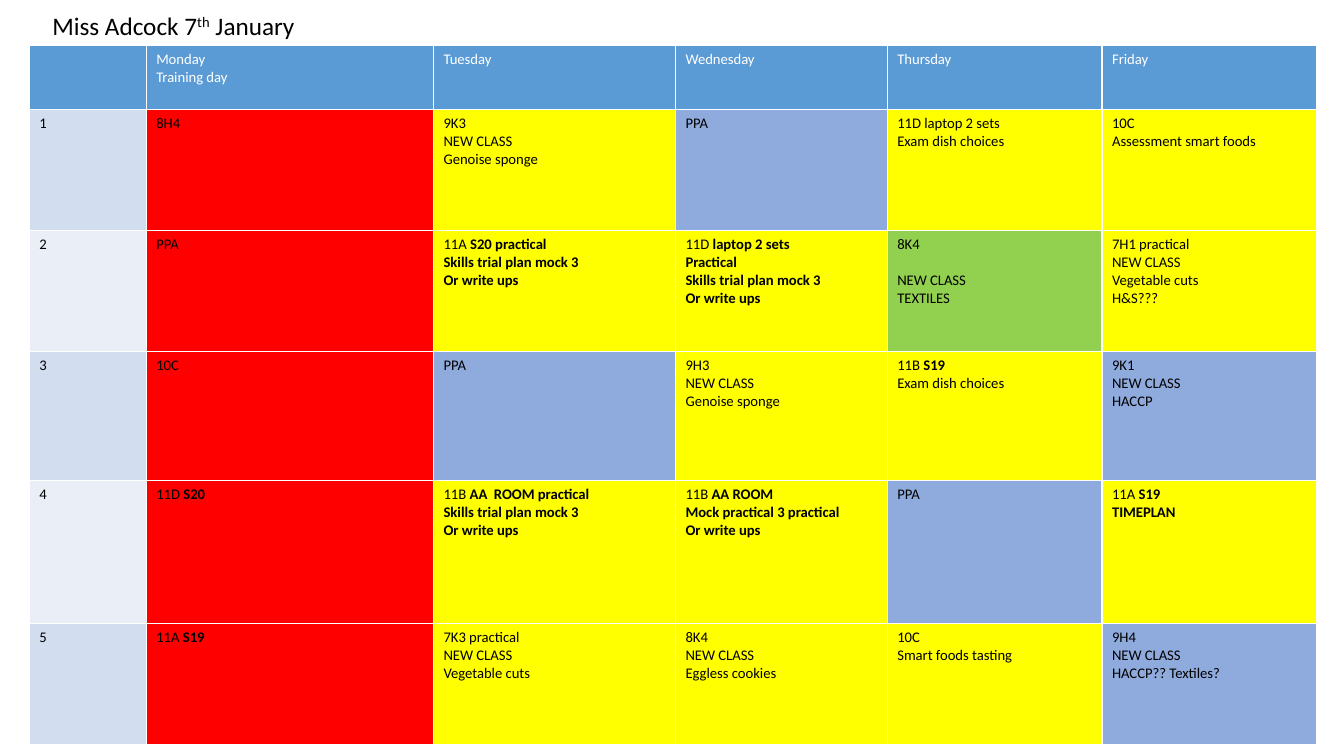
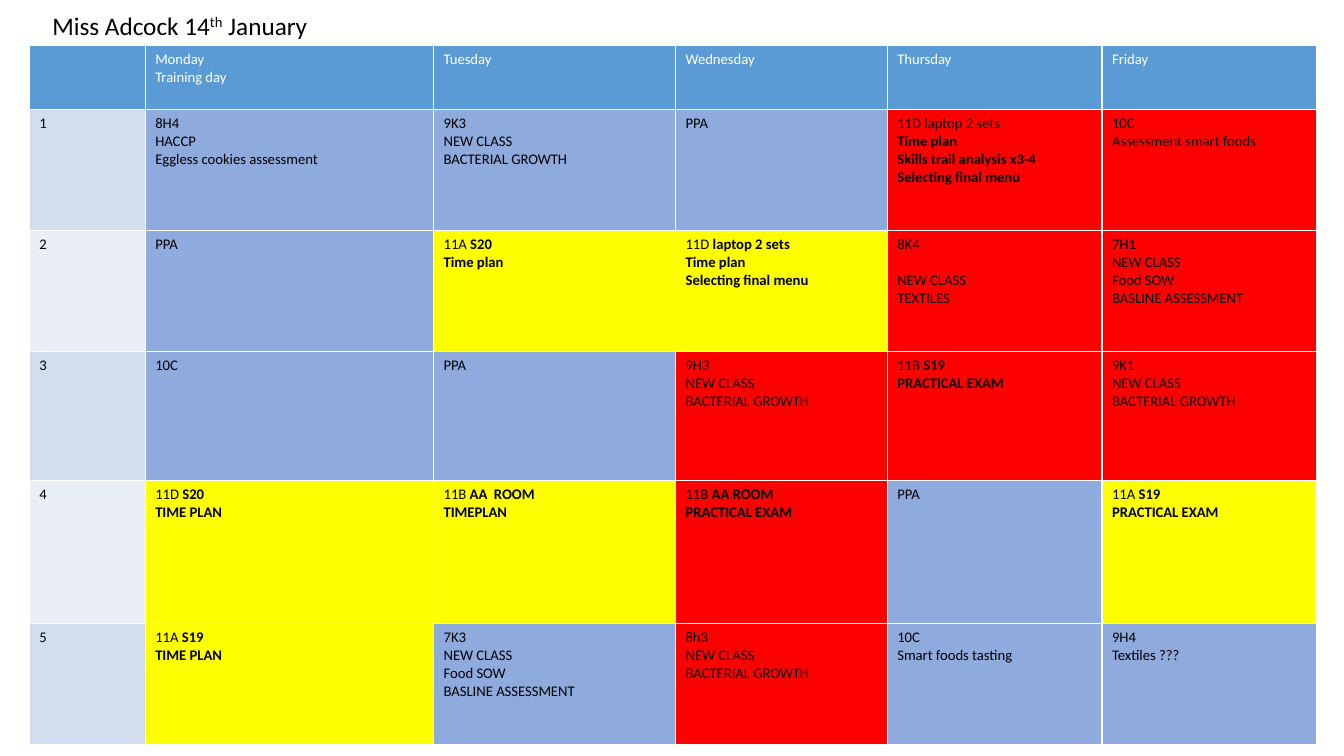
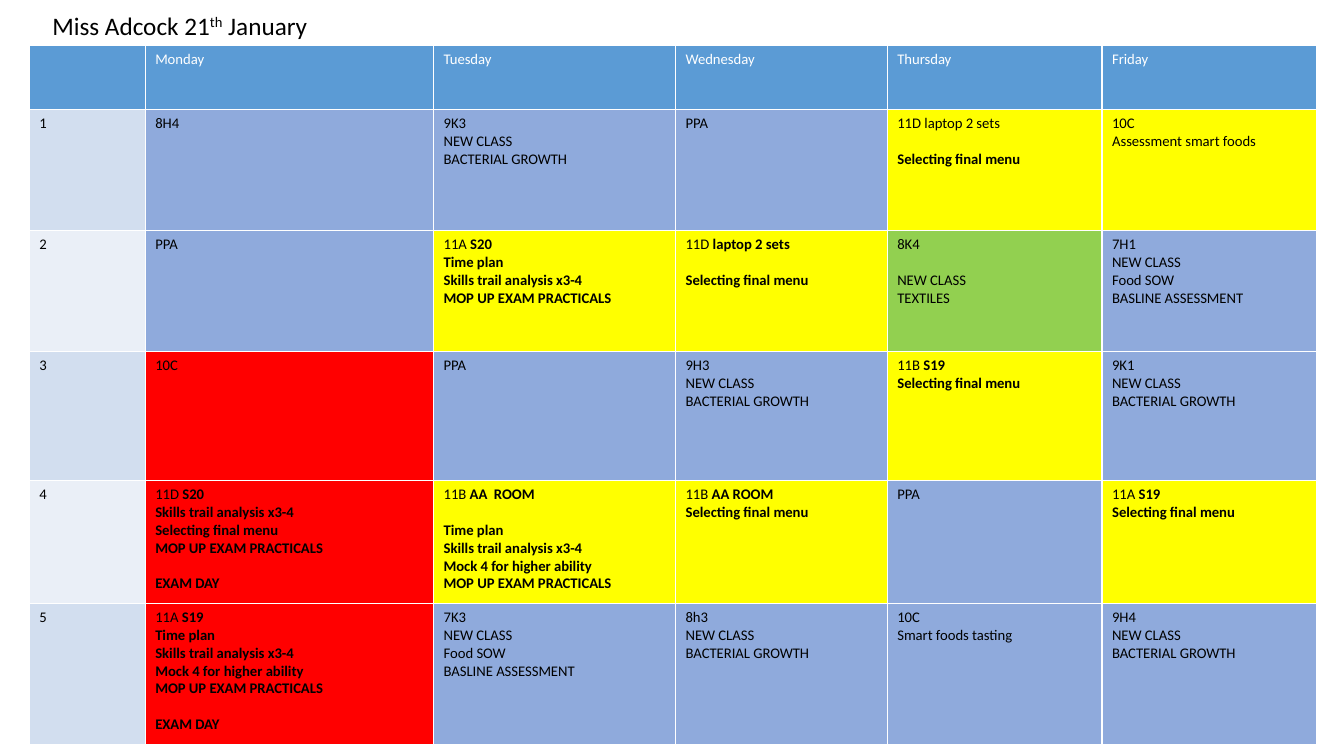
from dataclasses import dataclass

from lxml import etree
from pptx import Presentation
from pptx import util as u
from pptx.dml.color import RGBColor
from pptx.enum import text
from pptx.oxml import ns

# Shared look
FONT = "Calibri"
WHITE = RGBColor(0xFF, 0xFF, 0xFF)
BLACK = RGBColor(0x00, 0x00, 0x00)
HEADER_BLUE = RGBColor(0x5B, 0x9B, 0xD5)
PERIOD_BANDS = (RGBColor(0xD2, 0xDE, 0xEF), RGBColor(0xEA, 0xEF, 0xF7))
RED = RGBColor(0xFF, 0x00, 0x00)
YELLOW = RGBColor(0xFF, 0xFF, 0x00)
BLUE = RGBColor(0x8F, 0xAA, 0xDC)
GREEN = RGBColor(0x92, 0xD0, 0x50)

TITLE_SIZE, CELL_SIZE = 18, 10.5
BLANK_LINE = 12.8  # points
TABLE_LEFT, TABLE_TOP, TABLE_HEIGHT = 0.29, 0.45, 6.94
PERIOD_AND_MONDAY = 4.01
OTHER_DAYS = (2.4, 2.1, 2.13, 2.13)
FIRST_ROWS = (0.64, 1.2, 1.2, 1.28)
DAYS = ("Tuesday", "Wednesday", "Thursday", "Friday")


@dataclass(frozen=True)
class Lesson:
    """One timetable cell; *asterisks* mark bold, an empty line marks a gap."""
    fill: RGBColor
    content: str


@dataclass(frozen=True)
class Week:
    day: str
    monday: str
    period_width: float
    last_height: float
    periods: tuple[tuple[Lesson, ...], ...]


def new_class(fill: RGBColor, group: str, topic: str) -> Lesson:
    return Lesson(fill, f"{group}\nNEW CLASS\n{topic}")


# Lessons that come back from week to week
FREE = Lesson(BLUE, "PPA")
BACTERIA = "BACTERIAL GROWTH"
BASELINE = "Food SOW\nBASLINE ASSESSMENT"
SKILLS = "*Skills trail analysis x3-4*"
MENU = "*Selecting final menu*"
MOP_UP = "*MOP UP EXAM PRACTICALS*"
MOCK_3 = "*Skills trial plan mock 3*\n*Or write ups*"
ASSESSMENT = "10C\nAssessment smart foods"
TASTING = "10C\nSmart foods tasting"
TEXTILES = "8K4\n\nNEW CLASS\nTEXTILES"

WEEKS = (
    Week("7", "Monday\nTraining day", 1.16, 1.2, (
        (Lesson(RED, "8H4"),
         new_class(YELLOW, "9K3", "Genoise sponge"),
         FREE,
         Lesson(YELLOW, "11D laptop 2 sets\nExam dish choices"),
         Lesson(YELLOW, ASSESSMENT)),
        (Lesson(RED, "PPA"),
         Lesson(YELLOW, f"11A *S20 practical*\n{MOCK_3}"),
         Lesson(YELLOW, f"11D *laptop 2 sets*\n*Practical*\n{MOCK_3}"),
         Lesson(GREEN, TEXTILES),
         new_class(YELLOW, "7H1 practical", "Vegetable cuts\nH&S???")),
        (Lesson(RED, "10C"),
         FREE,
         new_class(YELLOW, "9H3", "Genoise sponge"),
         Lesson(YELLOW, "11B *S19*\nExam dish choices"),
         new_class(BLUE, "9K1", "HACCP")),
        (Lesson(RED, "11D *S20*"),
         Lesson(YELLOW, f"11B *AA  ROOM practical*\n{MOCK_3}"),
         Lesson(YELLOW, "11B *AA ROOM*\n*Mock practical 3 practical*\n*Or write ups*"),
         FREE,
         Lesson(YELLOW, "11A *S19*\n*TIMEPLAN*")),
        (Lesson(RED, "11A *S19*"),
         new_class(YELLOW, "7K3 practical", "Vegetable cuts"),
         new_class(YELLOW, "8K4", "Eggless cookies"),
         Lesson(YELLOW, TASTING),
         new_class(BLUE, "9H4", "HACCP?? Textiles?")),
    )),
    Week("14", "Monday\nTraining day", 1.15, 1.2, (
        (Lesson(BLUE, "8H4\nHACCP\nEggless cookies assessment"),
         new_class(BLUE, "9K3", BACTERIA),
         FREE,
         Lesson(RED, f"11D laptop 2 sets\n*Time plan*\n{SKILLS}\n{MENU}"),
         Lesson(RED, ASSESSMENT)),
        (FREE,
         Lesson(YELLOW, "11A *S20*\n*Time plan*"),
         Lesson(YELLOW, f"11D *laptop 2 sets*\n*Time plan*\n{MENU}"),
         Lesson(RED, TEXTILES),
         new_class(RED, "7H1", BASELINE)),
        (Lesson(BLUE, "10C"),
         FREE,
         new_class(RED, "9H3", BACTERIA),
         Lesson(RED, "11B *S19*\n*PRACTICAL EXAM*"),
         new_class(RED, "9K1", BACTERIA)),
        (Lesson(YELLOW, "11D *S20*\n*TIME PLAN*"),
         Lesson(YELLOW, "11B *AA  ROOM*\n*TIMEPLAN*"),
         Lesson(RED, "11B *AA ROOM*\n*PRACTICAL EXAM*"),
         FREE,
         Lesson(YELLOW, "11A *S19*\n*PRACTICAL EXAM*")),
        (Lesson(YELLOW, "11A *S19*\n*TIME PLAN*"),
         new_class(BLUE, "7K3", BASELINE),
         new_class(RED, "8h3", BACTERIA),
         Lesson(BLUE, TASTING),
         Lesson(BLUE, "9H4\nTextiles ???")),
    )),
    Week("21", "Monday", 1.15, 1.4, (
        (Lesson(BLUE, "8H4"),
         new_class(BLUE, "9K3", BACTERIA),
         FREE,
         Lesson(YELLOW, f"11D laptop 2 sets\n\n{MENU}"),
         Lesson(YELLOW, ASSESSMENT)),
        (FREE,
         Lesson(YELLOW, f"11A *S20*\n*Time plan*\n{SKILLS}\n{MOP_UP}"),
         Lesson(YELLOW, f"11D *laptop 2 sets*\n\n{MENU}"),
         Lesson(GREEN, TEXTILES),
         new_class(BLUE, "7H1", BASELINE)),
        (Lesson(RED, "10C"),
         FREE,
         new_class(BLUE, "9H3", BACTERIA),
         Lesson(YELLOW, f"11B *S19*\n{MENU}"),
         new_class(BLUE, "9K1", BACTERIA)),
        (Lesson(RED, f"11D *S20*\n{SKILLS}\n{MENU}\n{MOP_UP}\n\n*EXAM DAY*"),
         Lesson(YELLOW, f"11B *AA  ROOM*\n\n*Time plan*\n{SKILLS}\n"
                        f"*Mock 4 for higher ability*\n{MOP_UP}"),
         Lesson(YELLOW, f"11B *AA ROOM*\n{MENU}"),
         FREE,
         Lesson(YELLOW, f"11A *S19*\n{MENU}")),
        (Lesson(RED, f"11A *S19*\n*Time plan*\n{SKILLS}\n"
                     f"*Mock 4 for higher ability*\n{MOP_UP}\n\n*EXAM DAY*"),
         new_class(BLUE, "7K3", BASELINE),
         new_class(BLUE, "8h3", BACTERIA),
         Lesson(BLUE, TASTING),
         new_class(BLUE, "9H4", BACTERIA)),
    )),
)


def add_span(para, content: str, *, size: float = CELL_SIZE, color: RGBColor = BLACK,
             bold: bool = False, raised: bool = False) -> None:
    span = para.add_run()
    span.text = content
    span.font.name = FONT
    span.font.size = u.Pt(size)
    span.font.bold = bold
    span.font.color.rgb = color
    if raised:
        span.font._element.set("baseline", "30000")


def set_borders(cell) -> None:
    properties = cell._tc.get_or_add_tcPr()
    for side in "LRTB":
        line = etree.SubElement(properties, ns.qn(f"a:ln{side}"), w=str(u.Pt(1)))
        fill = etree.SubElement(line, ns.qn("a:solidFill"))
        etree.SubElement(fill, ns.qn("a:srgbClr"), val=str(WHITE))


def fill_cell(cell, lesson: Lesson, *, color: RGBColor = BLACK) -> None:
    set_borders(cell)
    cell.fill.solid()
    cell.fill.fore_color.rgb = lesson.fill
    para, gap = cell.text_frame.paragraphs[0], False
    for number, line in enumerate(lesson.content.split("\n")):
        if not line:
            gap = number > 0
            continue
        if number:
            para = cell.text_frame.add_paragraph()
        if gap:
            para.space_before = u.Pt(BLANK_LINE)
            gap = False
        for index, part in enumerate(line.split("*")):
            if part:
                add_span(para, part, color=color, bold=index % 2 == 1)


def add_timetable(page, week: Week) -> None:
    # The fourth period takes the height that the other rows leave
    widths = (week.period_width, PERIOD_AND_MONDAY - week.period_width, *OTHER_DAYS)
    fourth_height = TABLE_HEIGHT - sum(FIRST_ROWS) - week.last_height
    heights = (*FIRST_ROWS, fourth_height, week.last_height)
    table = page.shapes.add_table(
        len(heights), len(widths), u.Inches(TABLE_LEFT), u.Inches(TABLE_TOP),
        u.Inches(sum(widths)), u.Inches(TABLE_HEIGHT)).table
    table.first_row = table.horz_banding = False
    for column, width in zip(table.columns, widths):
        column.width = u.Inches(width)
    for row, height in zip(table.rows, heights):
        row.height = u.Inches(height)

    # Header row, then one row for each period
    for column, day in enumerate(("", week.monday, *DAYS)):
        fill_cell(table.cell(0, column), Lesson(HEADER_BLUE, day), color=WHITE)
    for row, lessons in enumerate(week.periods, start=1):
        period = Lesson(PERIOD_BANDS[(row - 1) % 2], str(row))
        for column, lesson in enumerate((period, *lessons)):
            fill_cell(table.cell(row, column), lesson)


def add_title(page, day: str) -> None:
    box = page.shapes.add_textbox(u.Inches(0.42), u.Inches(0.05), u.Inches(3.62), u.Inches(0.4))
    box.text_frame.word_wrap = True
    box.text_frame.auto_size = text.MSO_AUTO_SIZE.SHAPE_TO_FIT_TEXT
    para = box.text_frame.paragraphs[0]
    add_span(para, f"Miss Adcock {day}", size=TITLE_SIZE)
    add_span(para, "th", size=TITLE_SIZE, raised=True)
    add_span(para, " January", size=TITLE_SIZE)


def main() -> None:
    deck = Presentation()
    deck.slide_width, deck.slide_height = u.Inches(13.33), u.Inches(7.5)
    for week in WEEKS:
        page = deck.slides.add_slide(deck.slide_layouts[6])
        add_timetable(page, week)
        add_title(page, week.day)
    deck.save("out.pptx")


if __name__ == "__main__":
    main()
